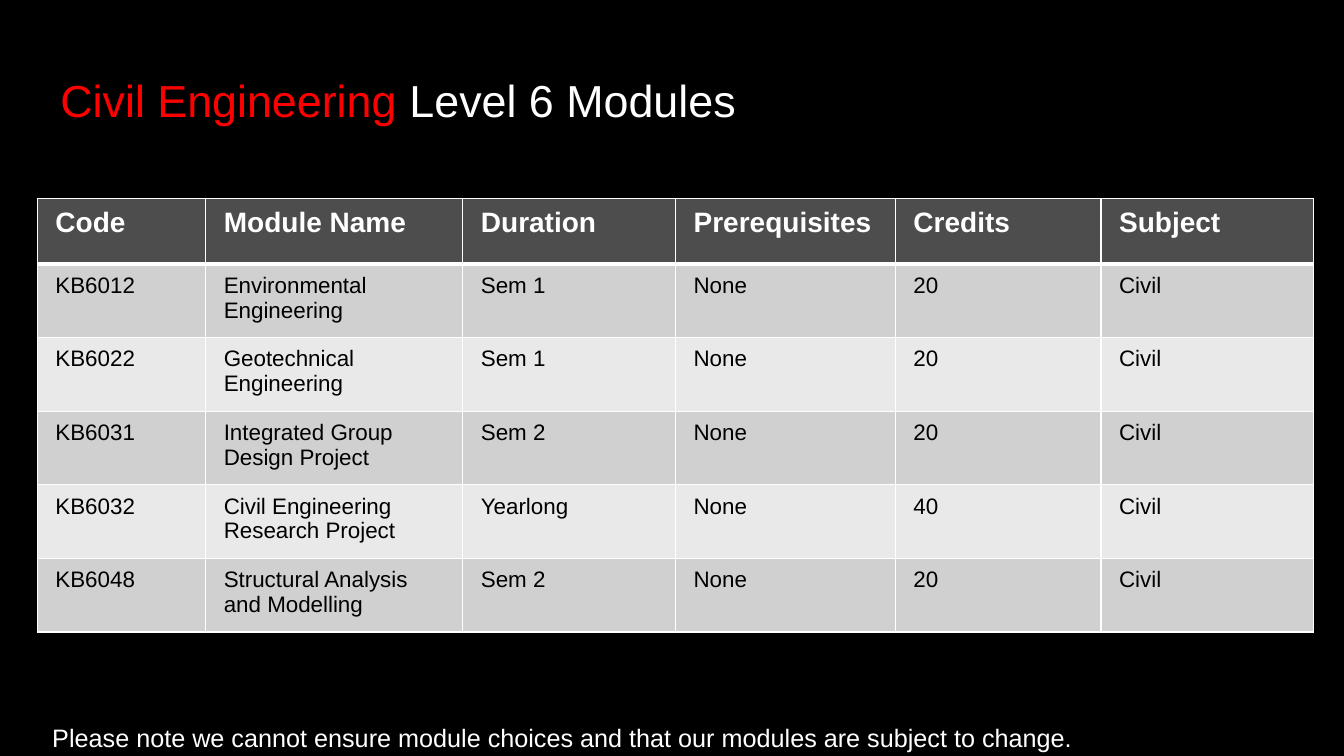
from lxml import etree
from pptx import Presentation
from pptx.dml.color import RGBColor
from pptx.enum.text import MSO_ANCHOR
from pptx.oxml.ns import qn
from pptx.util import Inches, Pt

MIDDLE = MSO_ANCHOR.MIDDLE
BLACK = RGBColor(0x00, 0x00, 0x00)
WHITE = RGBColor(0xFF, 0xFF, 0xFF)
RED = RGBColor(0xFF, 0x00, 0x00)
HEADER_GREY = RGBColor(0x4D, 0x4D, 0x4D)
BAND_GREYS = (RGBColor(0xD0, 0xD0, 0xD0), RGBColor(0xE9, 0xE9, 0xE9))
FONT = "Arial"

COLUMN_WIDTHS = (1.67, 2.55, 2.11, 2.18, 2.04, 2.11)
HEADER_HEIGHT, ROW_HEIGHT = 0.65, 0.73
MODULES = (
    ("Code", "Module Name", "Duration", "Prerequisites", "Credits", "Subject"),
    ("KB6012", "Environmental Engineering", "Sem 1", "None", "20", "Civil"),
    ("KB6022", "Geotechnical Engineering", "Sem 1", "None", "20", "Civil"),
    ("KB6031", "Integrated Group Design Project", "Sem 2", "None", "20", "Civil"),
    ("KB6032", "Civil Engineering Research Project", "Yearlong", "None", "40", "Civil"),
    ("KB6048", "Structural Analysis and Modelling", "Sem 2", "None", "20", "Civil"),
)


def set_font(font, size, color, bold=False):
    font.name, font.size, font.bold = FONT, Pt(size), bold
    font.color.rgb = color


def set_borders(cell, top, bottom):
    """Draw white borders; top and bottom widths are in points."""
    tc_pr = cell._tc.get_or_add_tcPr()
    sides = (("a:lnL", 1), ("a:lnR", 1), ("a:lnT", top), ("a:lnB", bottom))
    for i, (tag, width) in enumerate(sides):
        ln = etree.Element(qn(tag), w=str(Pt(width)))
        fill = etree.SubElement(ln, qn("a:solidFill"))
        etree.SubElement(fill, qn("a:srgbClr"), val=str(WHITE))
        tc_pr.insert(i, ln)


def add_text(slide, left, top, width, height):
    box = slide.shapes.add_textbox(
        Inches(left), Inches(top), Inches(width), Inches(height))
    tf = box.text_frame
    tf.word_wrap = True
    return tf


def add_title(slide, left, top, width, height):
    tf = add_text(slide, left, top, width, height)
    tf.vertical_anchor = MIDDLE
    p = tf.paragraphs[0]
    p.line_spacing = 0.9
    for text, color in (("Civil Engineering", RED), (" Level 6 Modules", WHITE)):
        r = p.add_run()
        r.text = text
        set_font(r.font, 32, color)


def fill_cell(cell, text, row):
    is_header = row == 0
    cell.text = text
    cell.margin_left = cell.margin_right = Inches(0.18)
    cell.margin_top = cell.margin_bottom = Inches(0.09)
    cell.fill.solid()
    cell.fill.fore_color.rgb = HEADER_GREY if is_header else BAND_GREYS[(row - 1) % 2]
    set_borders(cell, top=3 if row == 1 else 1, bottom=3 if is_header else 1)
    set_font(cell.text_frame.paragraphs[0].font, 20 if is_header else 16,
             WHITE if is_header else BLACK, bold=is_header)


def add_module_table(slide, left, top):
    width = sum(COLUMN_WIDTHS)
    height = HEADER_HEIGHT + ROW_HEIGHT * (len(MODULES) - 1)
    table = slide.shapes.add_table(
        len(MODULES), len(COLUMN_WIDTHS), Inches(left), Inches(top),
        Inches(width), Inches(height)).table
    for column, column_width in zip(table.columns, COLUMN_WIDTHS):
        column.width = Inches(column_width)
    for row, texts in enumerate(MODULES):
        table.rows[row].height = Inches(ROW_HEIGHT if row else HEADER_HEIGHT)
        for col, text in enumerate(texts):
            fill_cell(table.cell(row, col), text, row)


def add_note(slide, left, top, width, height):
    p = add_text(slide, left, top, width, height).paragraphs[0]
    p.text = ("Please note we cannot ensure module choices and that "
              "our modules are subject to change.")
    set_font(p.font, 18, WHITE)


def main():
    prs = Presentation()
    prs.slide_width, prs.slide_height = Inches(13.33), Inches(7.5)
    slide = prs.slides.add_slide(prs.slide_layouts[6])
    slide.background.fill.solid()
    slide.background.fill.fore_color.rgb = BLACK
    add_module_table(slide, 0.37, 1.97)
    add_title(slide, 0.5, 0.4, 10.15, 1.25)
    add_note(slide, 0.42, 7.12, 12.23, 0.4)
    prs.save("out.pptx")


if __name__ == "__main__":
    main()
